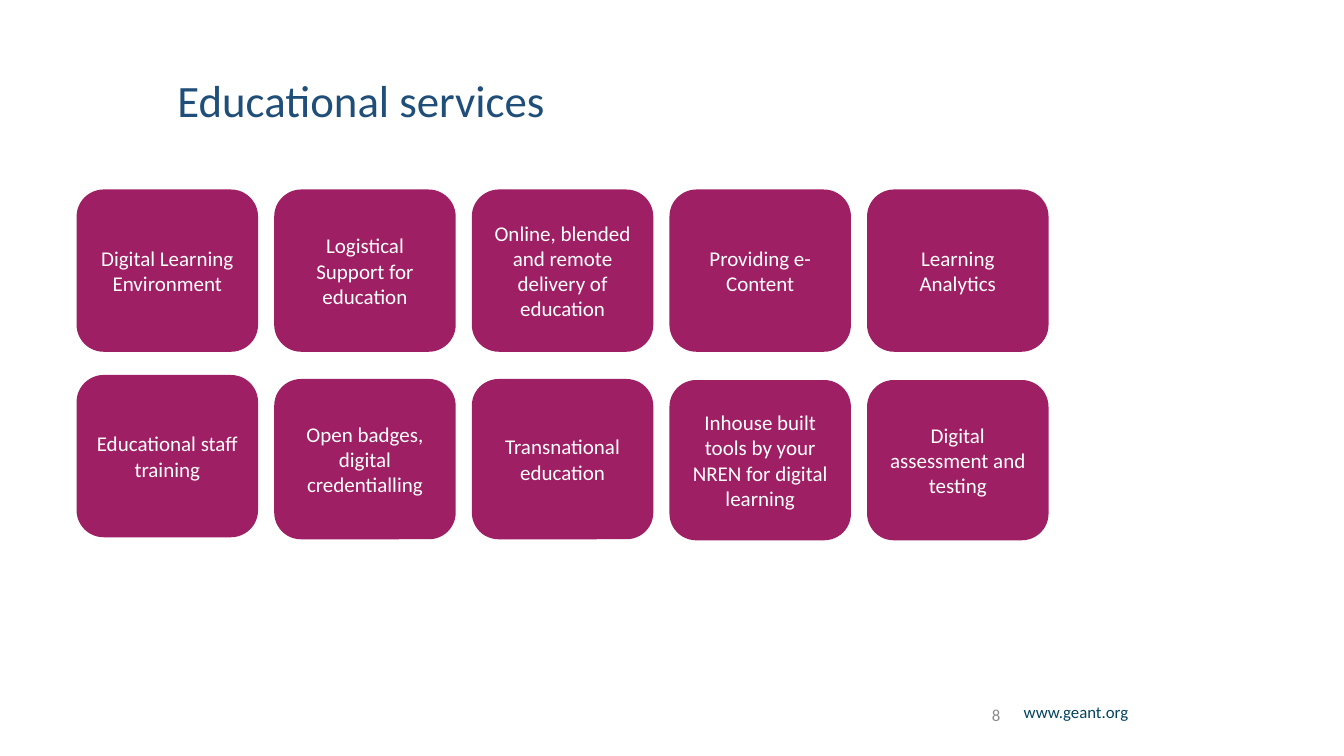
import pptx
import pptx.dml.color
import pptx.enum.shapes
import pptx.enum.text
import pptx.util
from pptx.util import Inches

ALIGN = pptx.enum.text.PP_ALIGN
ANCHOR = pptx.enum.text.MSO_ANCHOR
COLORS = {
    "background": "FFFFFF",
    "title": "1F4E79",
    "tile": "9E1F63",
    "tile_text": "FFFFFF",
    "address": "03435F",
    "page_number": "8C8C8C",
}
# Each tile: label, top, height; columns run left to right.
TILE_ROWS = [
    [
        ("Digital Learning Environment", 1.88, 1.61),
        ("Logistical Support for education", 1.88, 1.61),
        ("Online, blended and remote delivery of education", 1.88, 1.61),
        ("Providing e-Content", 1.88, 1.61),
        ("Learning Analytics", 1.88, 1.61),
    ],
    [
        ("Educational staff training", 3.72, 1.61),
        ("Open badges, digital credentialling", 3.76, 1.59),
        ("Transnational education", 3.76, 1.59),
        ("Inhouse built tools by your NREN for digital learning", 3.77, 1.59),
        ("Digital assessment and testing", 3.77, 1.59),
    ],
]
TILE_LEFT, TILE_PITCH, TILE_WIDTH = 0.76, 1.96, 1.8


def rgb(name):
    return pptx.dml.color.RGBColor.from_string(COLORS[name])


def write_text(shape, text, *, size, color, align=ALIGN.LEFT, anchor=ANCHOR.TOP,
               line_spacing=1.0):
    frame = shape.text_frame
    frame.word_wrap = True
    frame.auto_size = pptx.enum.text.MSO_AUTO_SIZE.NONE
    frame.vertical_anchor = anchor
    para = frame.paragraphs[0]
    para.alignment = align
    para.line_spacing = line_spacing
    span = para.add_run()
    span.text = text
    span.font.name = "Calibri"
    span.font.size = pptx.util.Pt(size)
    span.font.color.rgb = rgb(color)


class SlideBuilder:
    def __init__(self, page):
        self.page = page
        fill = page.background.fill
        fill.solid()
        fill.fore_color.rgb = rgb("background")

    def title(self, text, left, top, width, height):
        box = self.page.shapes.title
        box.left, box.top = Inches(left), Inches(top)
        box.width, box.height = Inches(width), Inches(height)
        write_text(box, text, size=32, color="title", line_spacing=0.9)

    def label(self, text, left, top, width, height, **text_format):
        box = self.page.shapes.add_textbox(
            Inches(left), Inches(top), Inches(width), Inches(height))
        write_text(box, text, size=12, align=ALIGN.RIGHT, **text_format)

    def tile(self, text, left, top, width, height):
        box = self.page.shapes.add_shape(
            pptx.enum.shapes.MSO_SHAPE.ROUNDED_RECTANGLE,
            Inches(left), Inches(top), Inches(width), Inches(height))
        box.shadow.inherit = False
        box.fill.solid()
        box.fill.fore_color.rgb = rgb("tile")
        box.line.fill.background()
        write_text(box, text, size=15, color="tile_text",
                   align=ALIGN.CENTER, anchor=ANCHOR.MIDDLE)


def main():
    deck = pptx.Presentation()
    deck.slide_width, deck.slide_height = Inches(13.33), Inches(7.5)
    title_only = deck.slide_layouts[5]
    builder = SlideBuilder(deck.slides.add_slide(title_only))

    builder.title("Educational services", 1.66, 0.73, 9.64, 0.71)
    for row in TILE_ROWS:
        for column, (text, top, height) in enumerate(row):
            left = TILE_LEFT + column * TILE_PITCH
            builder.tile(text, left, top, TILE_WIDTH, height)
    builder.label("www.geant.org", 9.61, 6.91, 1.68, 0.36, color="address")
    builder.label("8", 9.29, 6.91, 0.73, 0.36, color="page_number",
                  anchor=ANCHOR.MIDDLE)

    deck.save("out.pptx")


if __name__ == "__main__":
    main()
